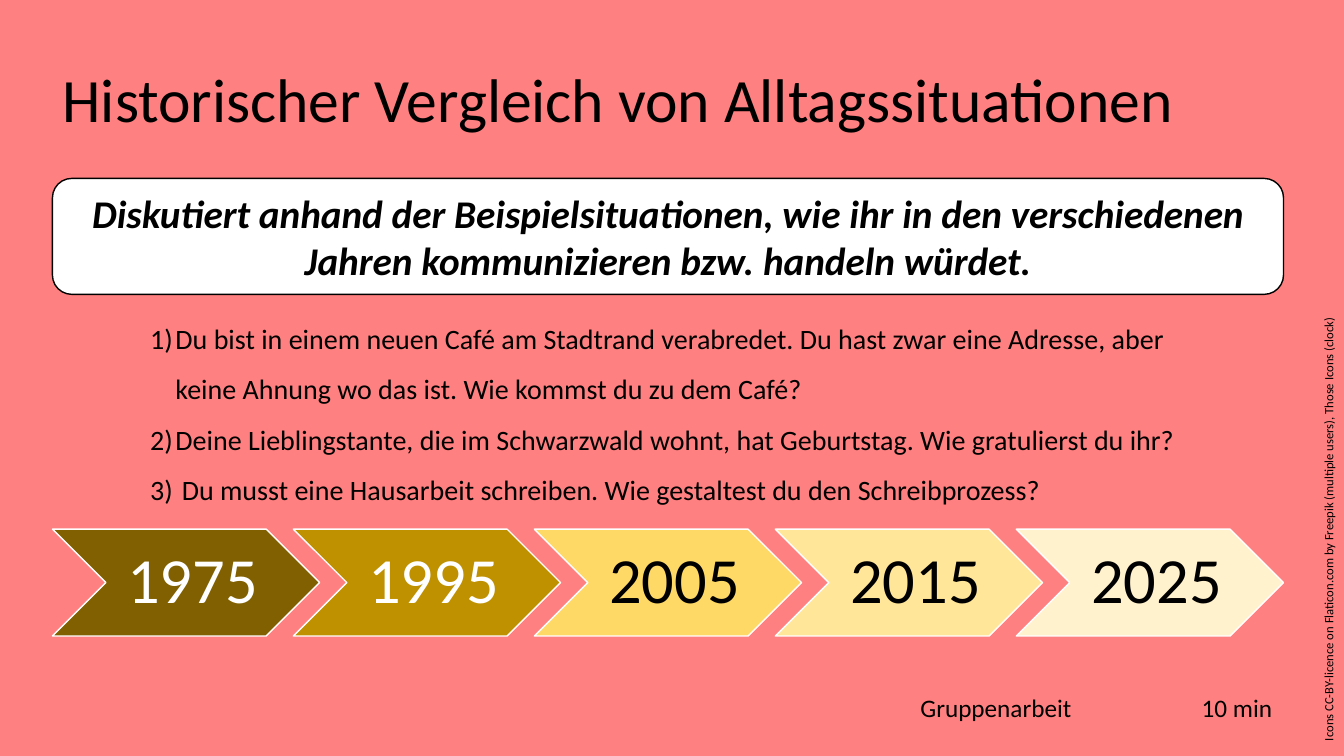
from dataclasses import dataclass

from lxml.etree import SubElement
from pptx import Presentation
from pptx.dml.color import RGBColor
from pptx.enum.shapes import MSO_SHAPE as Shape
from pptx.enum.text import MSO_ANCHOR as Anchor, MSO_AUTO_SIZE as AutoSize, PP_ALIGN as Align
from pptx.oxml.ns import qn
from pptx.util import Inches, Pt

TITLE = "Historischer Vergleich von Alltagssituationen"
TASK = ("Diskutiert anhand der Beispielsituationen, wie ihr in den verschiedenen "
        "Jahren kommunizieren bzw. handeln würdet.")
SITUATIONS = [
    "Du bist in einem neuen Café am Stadtrand verabredet. Du hast zwar eine Adresse, "
    "aber keine Ahnung wo das ist. Wie kommst du zu dem Café?",
    "Deine Lieblingstante, die im Schwarzwald wohnt, hat Geburtstag. "
    "Wie gratulierst du ihr?",
    " Du musst eine Hausarbeit schreiben. Wie gestaltest du den Schreibprozess?",
]
WORK_FORM = "Gruppenarbeit"
DURATION = "10 min"
CREDIT = ("Icons CC-BY-licence on Flaticon.com by Freepik (multiple users), "
          "Those Icons (clock)")
# year, arrow fill, text colour
TIMELINE = [
    ("1975", "806000", "FFFFFF"),
    ("1995", "BF9000", "FFFFFF"),
    ("2005", "FFD966", "000000"),
    ("2015", "FFE699", "000000"),
    ("2025", "FFF2CC", "000000"),
]


@dataclass(frozen=True)
class Theme:
    font: str = "Calibri"
    background: str = "FF8080"
    dark: str = "000000"
    light: str = "FFFFFF"
    title: int = 44
    year: int = 46
    task: int = 28
    situation: int = 20
    label: int = 18
    credit: int = 9


THEME = Theme()
MARGIN, CONTENT_WIDTH = 0.52, 12.21
ARROW_TOP, ARROW_WIDTH, ARROW_HEIGHT = 5.25, 2.65, 1.06
ARROW_STEP = (CONTENT_WIDTH - ARROW_WIDTH) / (len(TIMELINE) - 1)


def color(value):
    return RGBColor.from_string(value)


def place(shape, left, top, width, height):
    shape.left, shape.top = Inches(left), Inches(top)
    shape.width, shape.height = Inches(width), Inches(height)


def write(paragraph, text, size, text_color=THEME.dark):
    run = paragraph.add_run()
    run.text = text
    run.font.name = THEME.font
    run.font.size = Pt(size)
    run.font.color.rgb = color(text_color)
    return run


def add_title(slide):
    title = slide.shapes.title
    place(title, MARGIN, 0.4, CONTENT_WIDTH, 1.23)
    frame = title.text_frame
    frame.auto_size = AutoSize.NONE
    frame.vertical_anchor = Anchor.MIDDLE
    paragraph = frame.paragraphs[0]
    paragraph.alignment = Align.LEFT
    paragraph.line_spacing = 0.9
    write(paragraph, TITLE, THEME.title)


def add_situations(slide):
    body = slide.placeholders[1]
    place(body, 1.39, 2.97, 10.43, 2.57)
    frame = body.text_frame
    frame.auto_size = AutoSize.NONE
    frame.vertical_anchor = Anchor.TOP
    for index, situation in enumerate(SITUATIONS):
        paragraph = frame.add_paragraph() if index else frame.paragraphs[0]
        properties = paragraph._p.get_or_add_pPr()
        properties.set("marL", str(Inches(0.25)))
        properties.set("indent", str(-Inches(0.25)))
        SubElement(properties, qn("a:buFont"), typeface="+mj-lt")
        SubElement(properties, qn("a:buAutoNum"), type="arabicParenR")
        paragraph.line_spacing = 1.5
        paragraph.space_before = Pt(0)
        write(paragraph, situation, THEME.situation)


def add_filled_shape(slide, kind, box, fill, line):
    """Add a preset shape and return its text frame with one centred paragraph."""
    shape = slide.shapes.add_shape(kind, *map(Inches, box))
    shape.shadow.inherit = False
    shape.fill.solid()
    shape.fill.fore_color.rgb = color(fill)
    shape.line.color.rgb = color(line)
    shape.line.width = Pt(1)
    frame = shape.text_frame
    frame.word_wrap = True
    frame.vertical_anchor = Anchor.MIDDLE
    frame.paragraphs[0].alignment = Align.CENTER
    return frame


def add_task(slide):
    frame = add_filled_shape(slide, Shape.ROUNDED_RECTANGLE,
                             (MARGIN, 1.77, CONTENT_WIDTH, 1.15), THEME.light, THEME.dark)
    run = write(frame.paragraphs[0], TASK, THEME.task)
    run.font.bold = run.font.italic = True


def add_timeline(slide):
    for index, (year, fill, text_color) in enumerate(TIMELINE):
        box = (MARGIN + index * ARROW_STEP, ARROW_TOP, ARROW_WIDTH, ARROW_HEIGHT)
        frame = add_filled_shape(slide, Shape.CHEVRON, box, fill, THEME.light)
        frame.margin_left = Inches(0.2)
        frame.margin_top = frame.margin_right = frame.margin_bottom = Inches(0.07)
        frame.paragraphs[0].line_spacing = 0.9
        write(frame.paragraphs[0], year, THEME.year, text_color)


def add_label(slide, text, box, size, rotation=0):
    label = slide.shapes.add_textbox(*map(Inches, box))
    label.rotation = rotation
    label.text_frame.word_wrap = True
    write(label.text_frame.paragraphs[0], text, size)


def main():
    presentation = Presentation()
    presentation.slide_width, presentation.slide_height = Inches(13.33), Inches(7.5)
    slide = presentation.slides.add_slide(presentation.slide_layouts[1])
    slide.background.fill.solid()
    slide.background.fill.fore_color.rgb = color(THEME.background)

    add_title(slide)
    add_task(slide)
    add_situations(slide)
    add_timeline(slide)
    add_label(slide, WORK_FORM, (9.03, 6.82, 1.72, 0.4), THEME.label)
    add_label(slide, DURATION, (11.82, 6.82, 0.91, 0.4), THEME.label)
    add_label(slide, CREDIT, (10.93, 5.08, 4.49, 0.25), THEME.credit, rotation=270)
    presentation.save("out.pptx")


if __name__ == "__main__":
    main()
